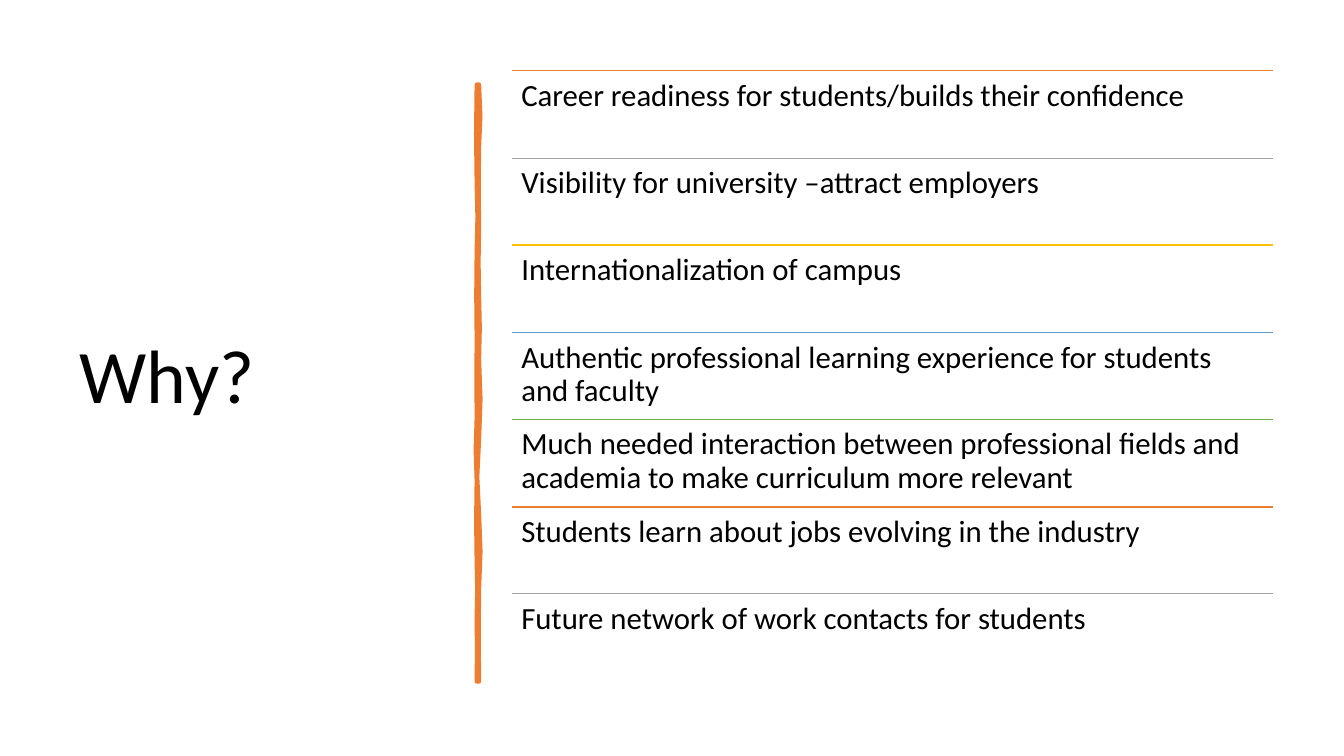
from lxml.etree import SubElement
from pptx import Presentation
from pptx.dml.color import RGBColor
from pptx.enum.shapes import MSO_CONNECTOR
from pptx.enum.text import MSO_ANCHOR
from pptx.oxml.ns import qn
from pptx.util import Emu, Pt

PX = 9144  # one px is a hundredth of an inch
BLACK = RGBColor(0x00, 0x00, 0x00)
ORANGE = RGBColor(0xED, 0x7D, 0x31)
GREY = RGBColor(0xA5, 0xA5, 0xA5)
GOLD = RGBColor(0xFF, 0xC0, 0x00)
BLUE = RGBColor(0x5B, 0x9B, 0xD5)
GREEN = RGBColor(0x70, 0xAD, 0x47)

REASONS = [
    ("Career readiness for students/builds their confidence", ORANGE),
    ("Visibility for university –attract employers", GREY),
    ("Internationalization of campus", GOLD),
    ("Authentic professional learning experience for students and faculty", BLUE),
    ("Much needed interaction between professional fields and academia "
     "to make curriculum more relevant", GREEN),
    ("Students learn about jobs evolving in the industry", ORANGE),
    ("Future network of work contacts for students", GREY),
]

# Wavy bar outline in tenths of a px: down the right edge, up the left
BAR = [
    (4750, 840), (4763, 1150), (4750, 1460), (4746, 1860), (4750, 2260),
    (4745, 2600), (4750, 2940), (4757, 3250), (4750, 3560), (4764, 3960),
    (4750, 4360), (4732, 4730), (4750, 5100), (4764, 5470), (4750, 5840),
    (4746, 6300), (4750, 6760), (4730, 6760), (4733, 6450), (4730, 6130),
    (4736, 5850), (4730, 5570), (4725, 5170), (4730, 4770), (4720, 4460),
    (4730, 4150), (4728, 3750), (4730, 3350), (4726, 2930), (4730, 2500),
    (4738, 2160), (4730, 1810), (4724, 1330), (4730, 840),
]


class Deck:
    """Holds the text style and the current slide."""

    font = {"name": "Calibri"}

    def __init__(self, width, height):
        self.prs = Presentation()
        self.prs.slide_width = Emu(width * PX)
        self.prs.slide_height = Emu(height * PX)
        self.slide = self.prs.slides.add_slide(self.prs.slide_layouts[6])
        self.shapes = self.slide.shapes

    def text(self, words, box, size, pad, anchor):
        frame = self.shapes.add_textbox(*[Emu(n * PX) for n in box]).text_frame
        side, top = (Emu(n * PX) for n in pad)
        form = {"word_wrap": True, "vertical_anchor": anchor,
                "margin_left": side, "margin_right": side,
                "margin_top": top, "margin_bottom": top}
        for key, value in form.items():
            setattr(frame, key, value)
        para = frame.paragraphs[0]
        para.line_spacing = 0.9
        run = para.add_run()
        run.text = words
        for key, value in {**self.font, "size": Pt(size)}.items():
            setattr(run.font, key, value)
        run.font.color.rgb = BLACK

    def rule(self, left, top, width, color):
        ends = (left, top, left + width, top)
        line = self.shapes.add_connector(
            MSO_CONNECTOR.STRAIGHT, *[Emu(n * PX) for n in ends])
        line.line.color.rgb = color
        line.line.width = Pt(1)
        SubElement(line.element.spPr, qn("a:effectLst"))

    def outline(self, points, color, weight):
        pen = self.shapes.build_freeform(*points[0], scale=PX / 10)
        pen.add_line_segments(points[1:], close=True)
        shape = pen.convert_to_shape()
        shape.shadow.inherit = False
        shape.fill.solid()
        shape.fill.fore_color.rgb = color
        shape.line.color.rgb = color
        shape.line.width = Pt(weight)

    def save(self):
        self.prs.save("out.pptx")


def main():
    deck = Deck(1333, 750)

    # Title and the bar beside it
    deck.text("Why?", (69, 70, 374, 611), 54, (10, 5), MSO_ANCHOR.MIDDLE)
    deck.outline(BAR, ORANGE, 3.25)

    # Reasons, each under its own rule, 86.5 px apart
    left, width = 508, 755
    for i, (words, color) in enumerate(REASONS):
        top = 70 + (173 * i + 1) // 2
        deck.rule(left, top, width, color)
        deck.text(words, (left, top, width, 86), 22, (9, 9), MSO_ANCHOR.TOP)

    deck.save()


if __name__ == "__main__":
    main()
